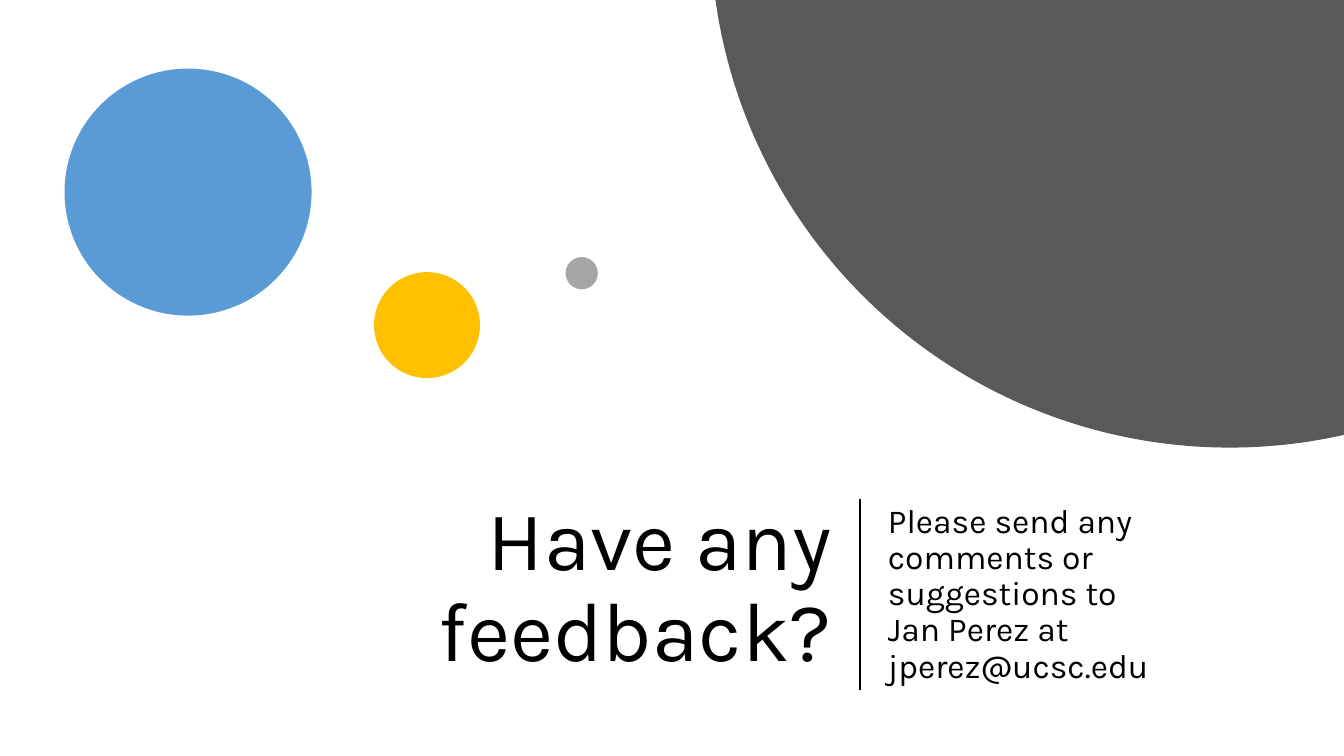
from dataclasses import dataclass
from math import asin, acos, cos, pi, sin

from lxml.etree import SubElement
from pptx import Presentation
from pptx.dml.color import RGBColor
from pptx.enum.shapes import MSO_CONNECTOR, MSO_SHAPE
from pptx.enum.text import MSO_ANCHOR, MSO_AUTO_SIZE, PP_ALIGN
from pptx.oxml.ns import qn
from pptx.shapes.autoshape import Shape
from pptx.slide import Slide
from pptx.util import Inches, Pt

WIDTH = Inches(13.333)
HEIGHT = Inches(7.5)


@dataclass(frozen=True)
class Theme:
    font: str = "Karla"
    ink: str = "000000"
    blue: str = "5B9BD5"
    gold: str = "FFC000"
    silver: str = "A5A5A5"
    charcoal: str = "595959"
    title_size: float = 60
    body_size: float = 24
    rule_width: float = 1.5
    line_spacing: float = 0.9


@dataclass(frozen=True)
class Box:
    left: float
    top: float
    width: float
    height: float


@dataclass(frozen=True)
class Circle:
    left: float
    top: float
    diameter: float
    color: str


THEME = Theme()
TITLE_BOX = Box(19.2, 65.2, 43.43, 25.33)
BODY_BOX = Box(65.33, 66, 26.7, 25.33)
RULE_COLUMN = 63.98
CIRCLES = (
    Circle(4.8, 9.07, 18.38, THEME.blue),
    Circle(27.83, 36, 7.88, THEME.gold),
    Circle(42.08, 34, 2.4, THEME.silver),
)
CORNER_DISC = Circle(52.87, -78.14, 77.26, THEME.charcoal)
ARC_STEPS = 120


def col(share: float) -> int:
    return round(WIDTH * share / 100)


def row(share: float) -> int:
    return round(HEIGHT * share / 100)


def paint(s: Shape, color: str) -> None:
    s.shadow.inherit = False
    s.fill.solid()
    s.fill.fore_color.rgb = RGBColor.from_string(color)
    s.line.fill.background()


def write_text(s: Shape, box: Box, text: str, size: float, align: PP_ALIGN) -> None:
    s.left, s.top = col(box.left), row(box.top)
    s.width, s.height = col(box.width), row(box.height)
    tf = s.text_frame
    tf.text = text
    tf.word_wrap = True
    tf.auto_size = MSO_AUTO_SIZE.NONE
    tf.vertical_anchor = MSO_ANCHOR.MIDDLE
    p = tf.paragraphs[0]
    p.alignment = align
    p.line_spacing = THEME.line_spacing
    for r in p.runs:
        r.font.name = THEME.font
        r.font.size = Pt(size)
        r.font.color.rgb = RGBColor.from_string(THEME.ink)


def add_circle(slide: Slide, circle: Circle) -> None:
    side = col(circle.diameter)
    s = slide.shapes.add_shape(
        MSO_SHAPE.OVAL, col(circle.left), row(circle.top), side, side
    )
    paint(s, circle.color)


def add_corner_disc(slide: Slide, circle: Circle) -> None:
    radius = col(circle.diameter) / 2
    cx, cy = col(circle.left) + radius, row(circle.top) + radius
    start = acos((WIDTH - cx) / radius)
    end = pi - asin(-cy / radius)
    angles = [start + (end - start) * i / ARC_STEPS for i in range(ARC_STEPS + 1)]
    arc = [(round(cx + radius * cos(a)), round(cy + radius * sin(a))) for a in angles]
    builder = slide.shapes.build_freeform(WIDTH, 0)
    builder.add_line_segments(arc, close=True)
    paint(builder.convert_to_shape(), circle.color)


def add_rule(slide: Slide, column: float, box: Box) -> None:
    x = col(column)
    line = slide.shapes.add_connector(
        MSO_CONNECTOR.STRAIGHT, x, row(box.top), x, row(box.top + box.height)
    )
    line.line.color.rgb = RGBColor.from_string(THEME.ink)
    line.line.width = Pt(THEME.rule_width)
    SubElement(line._element.spPr, qn("a:effectLst"))


def main() -> None:
    prs = Presentation()
    prs.slide_width, prs.slide_height = WIDTH, HEIGHT
    slide = prs.slides.add_slide(prs.slide_layouts[5])
    write_text(
        slide.shapes.title, TITLE_BOX, "Have any feedback?",
        THEME.title_size, PP_ALIGN.RIGHT,
    )
    body = slide.shapes.add_textbox(0, 0, 0, 0)
    write_text(
        body, BODY_BOX,
        "Please send any comments or suggestions to\vJan Perez at jperez@ucsc.edu",
        THEME.body_size, PP_ALIGN.LEFT,
    )
    for circle in CIRCLES:
        add_circle(slide, circle)
    add_corner_disc(slide, CORNER_DISC)
    add_rule(slide, RULE_COLUMN, BODY_BOX)
    prs.save("out.pptx")


if __name__ == "__main__":
    main()
